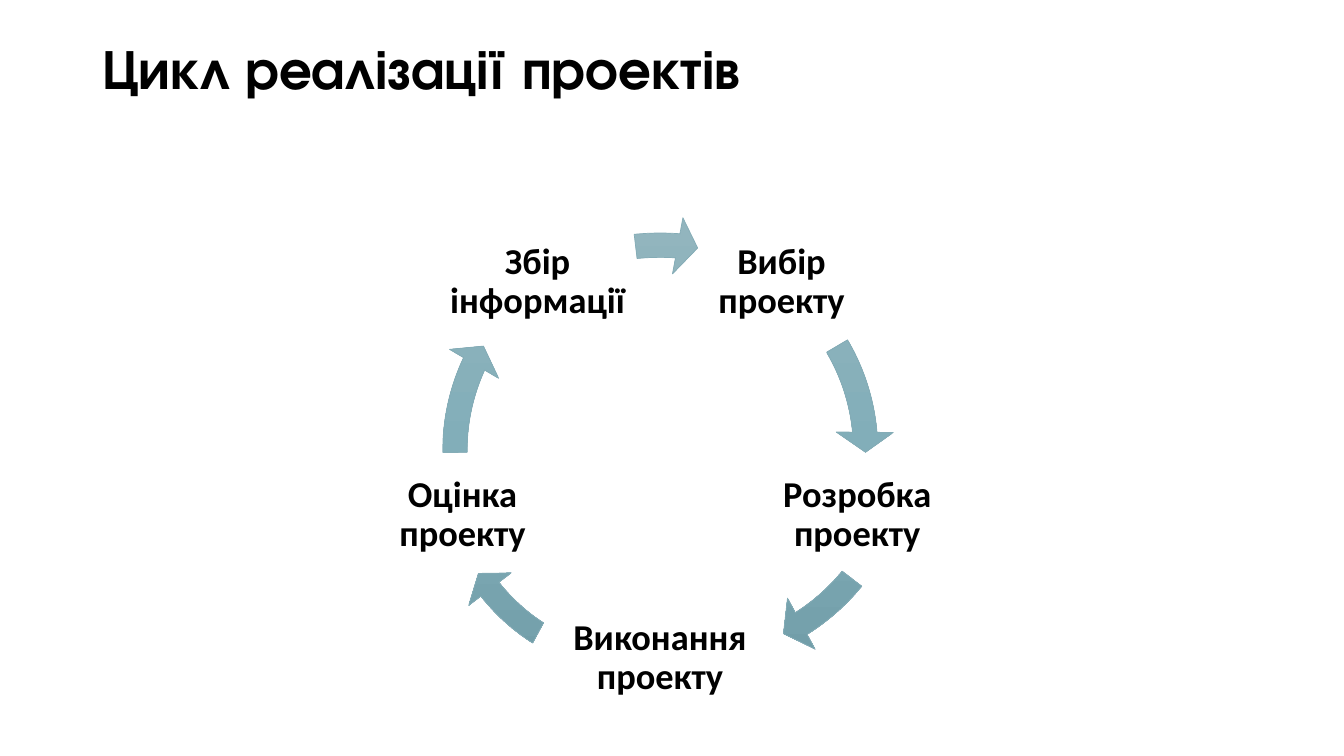
from copy import deepcopy
from dataclasses import dataclass

from pptx import Presentation
from pptx.dml.color import RGBColor
from pptx.enum.shapes import MSO_SHAPE
from pptx.enum.text import MSO_ANCHOR, MSO_AUTO_SIZE, PP_ALIGN
from pptx.util import Pt


@dataclass(frozen=True)
class Theme:
    """Colours, fonts and type sizes of the slide."""

    ink: RGBColor = RGBColor.from_string("000000")
    outline: RGBColor = RGBColor.from_string("84ACB6")
    gradient: tuple = ((0, "92B5BE"), (0.5, "82AEB9"), (1, "709CA7"))
    title_font: str = "TeX Gyre Adventor"
    stage_font: str = "Calibri"
    title_size: int = 40
    stage_size: int = 26


THEME = Theme()
STAGE_HEIGHT = 89.3
STAGE_INSET = 2.9
RING_BOX = (304.6, 154.8, 334.1, 334.1)

STAGES = (
    ("Вибір проекту", (498.2, 157, 120.2)),
    ("Розробка проекту", (536.4, 323.3, 151.9)),
    ("Виконання проекту", (401, 425.5, 141.1)),
    ("Оцінка проекту", (275, 323.3, 110.9)),
    ("Збір інформації", (314.6, 157, 139)),
)

ARROWS = (
    (RING_BOX, 329.43, 354.89),
    ((314.6, 151.9, 347.8, 338.4), 37.55, 56),
    ((297.4, 154.8, 313.2, 337), 118.4, 136.85),
    (RING_BOX, 179.51, 204.97),
    ((288, 154.8, 367.2, 334.1), 263.14, 274.89),
)


def write_text(frame, wording, font_name, size, alignment):
    """Fill a frame with one bold, vertically centred paragraph."""
    frame.word_wrap = True
    frame.auto_size = MSO_AUTO_SIZE.NONE
    frame.vertical_anchor = MSO_ANCHOR.MIDDLE
    paragraph = frame.paragraphs[0]
    paragraph.text = wording
    paragraph.alignment = alignment
    paragraph.line_spacing = 0.9
    paragraph.font.name = font_name
    paragraph.font.size = Pt(size)
    paragraph.font.bold = True
    paragraph.font.color.rgb = THEME.ink


def place_title(slide, wording):
    """Position and format the title placeholder."""
    title = slide.shapes.title
    title.left, title.top = Pt(66.2), Pt(27.4)
    title.width, title.height = Pt(843.1), Pt(46.8)
    write_text(title.text_frame, wording, THEME.title_font, THEME.title_size, PP_ALIGN.LEFT)


def add_stage(slide, wording, left, top, width):
    """Add the label of one stage of the cycle."""
    stage = slide.shapes.add_textbox(Pt(left), Pt(top), Pt(width), Pt(STAGE_HEIGHT))
    frame = stage.text_frame
    frame.margin_left = frame.margin_right = Pt(STAGE_INSET)
    frame.margin_top = frame.margin_bottom = Pt(STAGE_INSET)
    write_text(frame, wording, THEME.stage_font, THEME.stage_size, PP_ALIGN.CENTER)


def paint_gradient(arrow):
    """Fill an arrow with the theme gradient from top to bottom."""
    arrow.fill.gradient()
    arrow.fill.gradient_angle = 270
    stop_list = arrow._element.xpath(".//a:gsLst")[0]
    stop_list.append(deepcopy(stop_list[-1]))
    for stop, (position, colour) in zip(arrow.fill.gradient_stops, THEME.gradient):
        stop.position = position
        stop.color.rgb = RGBColor.from_string(colour)


def add_cycle_arrow(slide, box, start, end):
    """Add a ring arrow running between two angles in degrees."""
    arrow = slide.shapes.add_shape(MSO_SHAPE.CIRCULAR_ARROW, *map(Pt, box))
    units_per_degree = 0.6
    settings = (0.052, 3.358, end * units_per_degree, start * units_per_degree, 0.061)
    for index, setting in enumerate(settings):
        arrow.adjustments[index] = setting
    arrow.shadow.inherit = False
    paint_gradient(arrow)
    arrow.line.color.rgb = THEME.outline
    arrow.line.width = Pt(0.5)


def main():
    """Build the project cycle slide."""
    presentation = Presentation()
    presentation.slide_width, presentation.slide_height = Pt(960), Pt(540)
    slide = presentation.slides.add_slide(presentation.slide_layouts[5])
    place_title(slide, "Цикл реалізації проектів")
    for (wording, position), (box, start, end) in zip(STAGES, ARROWS):
        add_stage(slide, wording, *position)
        add_cycle_arrow(slide, box, start, end)
    presentation.save("out.pptx")


if __name__ == "__main__":
    main()
